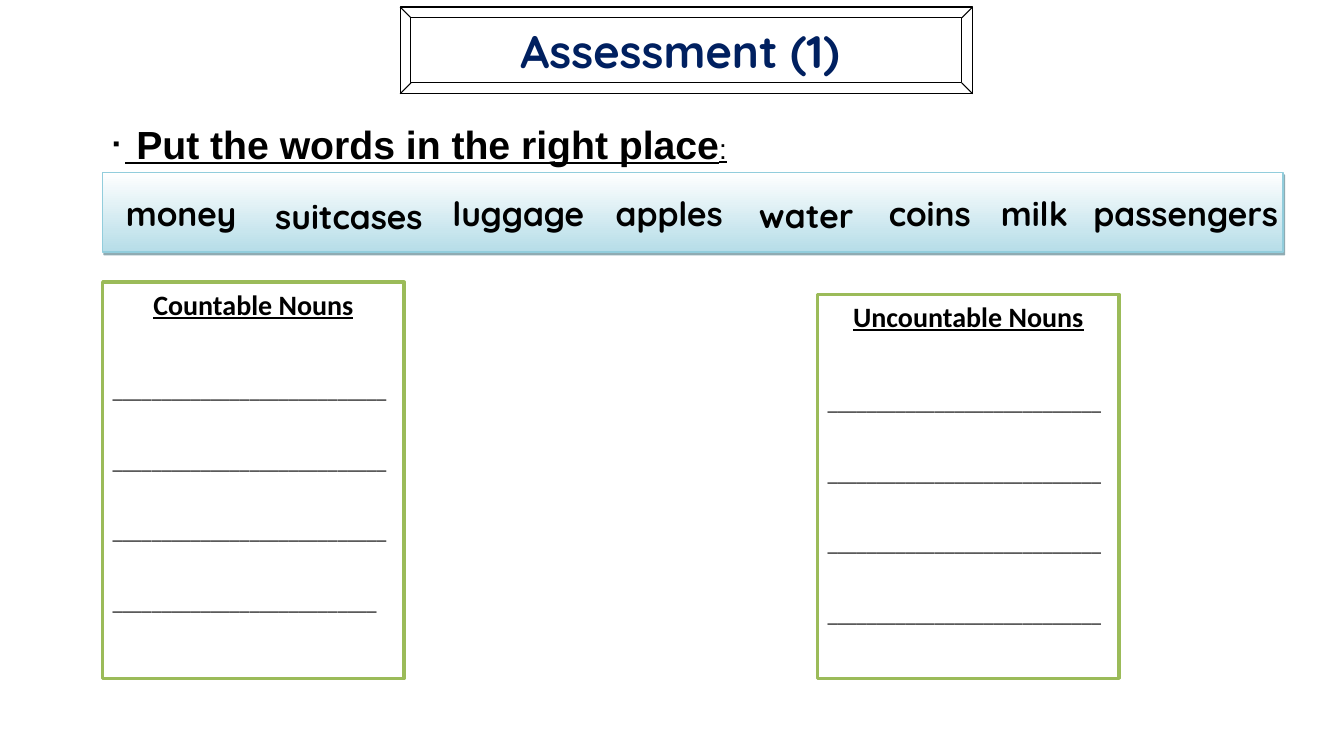
from lxml import etree
from pptx import Presentation
from pptx.dml.color import RGBColor
from pptx.enum.shapes import MSO_SHAPE
from pptx.enum.text import MSO_ANCHOR, MSO_AUTO_SIZE, PP_ALIGN
from pptx.oxml.ns import qn
from pptx.util import Pt

BEVEL, RECT = MSO_SHAPE.BEVEL, MSO_SHAPE.RECTANGLE
TOP, MIDDLE = MSO_ANCHOR.TOP, MSO_ANCHOR.MIDDLE
LEFT, CENTER = PP_ALIGN.LEFT, PP_ALIGN.CENTER
NO_AUTOFIT = MSO_AUTO_SIZE.NONE

TITLE = dict(name="Quicksand", size=Pt(32.5), bold=True, color="002060")
WORD = dict(name="Quicksand", size=Pt(24), bold=True)
HEADING = dict(name="Calibri", size=Pt(20), bold=True, underline=True)
BLANKS = dict(name="Calibri", size=Pt(14))
TASK = dict(name="Arial", size=Pt(28), underline=True)

WORDS = [
    ("money", 82.8, 134.6, 95.8),
    ("suitcases", 189.4, 136.1, 123.8),
    ("luggage", 316.1, 134.6, 117.4),
    ("apples", 432.7, 133.9, 123.8),
    ("water", 535, 135.4, 87.1),
    ("coins", 627.8, 134.6, 82.1),
    ("milk", 707.8, 134.6, 82.1),
    ("passengers", 774, 133.9, 161.3),
]
NOUN_BOXES = [
    ("Countable Nouns", 73.4, 201.6, 283, 111),
    ("Uncountable Nouns", 584, 210.2, 274.3, 112),
]


def rgb(code):
    """Turn a hex string into a colour."""
    return RGBColor.from_string(code)


class Worksheet:
    """Hold the worksheet style and build its elements on one slide."""

    def __init__(self, prs):
        """Add the slide that receives every element."""
        self.s = prs.slides.add_slide(prs.slide_layouts[1])
        self.ink = "000000"

    def add_text(self, p, text, style, **changes):
        """Add one formatted run to a paragraph."""
        r = p.add_run()
        r.text = text
        values = {"color": self.ink, **style, **changes}
        r.font.color.rgb = rgb(values.pop("color"))
        for key, value in values.items():
            setattr(r.font, key, value)

    def frame(self, sp, anchor):
        """Prepare the text frame of a shape and return it."""
        tf = sp.text_frame
        for key, value in dict(word_wrap=True, auto_size=NO_AUTOFIT,
                               vertical_anchor=anchor).items():
            setattr(tf, key, value)
        return tf

    def place(self, sp, x, y, w, h):
        """Move and resize a placeholder."""
        for key, value in dict(left=x, top=y, width=w, height=h).items():
            setattr(sp, key, Pt(value))

    def shape(self, kind, x, y, w, h, line, weight, fill=None):
        """Add a preset shape with a plain outline."""
        sp = self.s.shapes.add_shape(kind, Pt(x), Pt(y), Pt(w), Pt(h))
        sp.shadow.inherit = False
        sp.line.color.rgb = rgb(line)
        sp.line.width = Pt(weight)
        if fill:
            sp.fill.solid()
            sp.fill.fore_color.rgb = rgb(fill)
        else:
            sp.fill.background()
        return sp

    def title(self, text, *box):
        """Set the title inside a bevelled frame."""
        self.shape(BEVEL, *box, self.ink, 0.75)
        sp = self.s.shapes.title
        self.place(sp, *box)
        p = self.frame(sp, MIDDLE).paragraphs[0]
        p.alignment = CENTER
        self.add_text(p, text, TITLE)

    def task(self, text, *box):
        """Set the bulleted instruction in the body placeholder."""
        sp = self.s.placeholders[1]
        self.place(sp, *box)
        p = self.frame(sp, TOP).paragraphs[0]
        p.space_before = Pt(0)
        self.add_text(p, " ", TASK, bold=False)
        self.add_text(p, text, TASK, bold=True)
        self.add_text(p, ":", TASK, size=Pt(20), bold=False)
        pPr = p._p.get_or_add_pPr()
        pPr.set("marL", str(Pt(9)))
        pPr.set("indent", str(-Pt(9)))
        for tag, key, value in [("a:buSzPct", "val", "50000"),
                                ("a:buFont", "typeface", "Arial"),
                                ("a:buChar", "char", "▪")]:
            etree.SubElement(pPr, qn(tag)).set(key, value)

    def word_bank(self, *box):
        """Add the gradient bar behind the words."""
        sp = self.shape(RECT, *box, "92CDDC", 1)
        sp.fill.gradient()
        sp.fill.gradient_angle = 270
        for stop, code in zip(sp.fill.gradient_stops, ("FFFFFF", "B6DDE8")):
            stop.color.rgb = rgb(code)
        effects = sp._element.spPr.find(qn("a:effectLst"))
        shadow = etree.SubElement(effects, qn("a:outerShdw"), blurRad="0",
                                  dist=str(Pt(2.2)), dir=str(63 * 60000),
                                  algn="ctr", rotWithShape="0")
        color = etree.SubElement(shadow, qn("a:srgbClr"), val="205867")
        etree.SubElement(color, qn("a:alpha"), val="50000")

    def word(self, text, x, y, w):
        """Add one word of the word bank."""
        sp = self.s.shapes.add_textbox(Pt(x), Pt(y), Pt(w), Pt(36))
        self.add_text(self.frame(sp, TOP).paragraphs[0], text, WORD)

    def noun_box(self, heading, x, y, h, length):
        """Add a framed answer box with a heading and writing lines."""
        sp = self.shape(RECT, x, y, 215.3, h, "9BBB59", 2.5, "FFFFFF")
        tf = self.frame(sp, TOP)
        p = tf.paragraphs[0]
        p.alignment = CENTER
        p.space_after = Pt(8)
        self.add_text(p, heading, HEADING)
        p = tf.add_paragraph()
        p.alignment = LEFT
        p.line_spacing = 3.0
        p.space_after = Pt(8)
        self.add_text(p, "_" * length, BLANKS)


def main():
    """Build the assessment slide and save it."""
    prs = Presentation()
    prs.slide_width, prs.slide_height = Pt(960), Pt(540)
    sheet = Worksheet(prs)
    sheet.title("Assessment (1) ", 285.8, 5, 409, 62)
    sheet.task("Put the words in the right place", 73.4, 82, 500, 41)
    for noun_box in NOUN_BOXES:
        sheet.noun_box(*noun_box)
    sheet.word_bank(73.4, 123.1, 843.1, 56.9)
    for word in WORDS:
        sheet.word(*word)
    prs.save("out.pptx")


if __name__ == "__main__":
    main()
